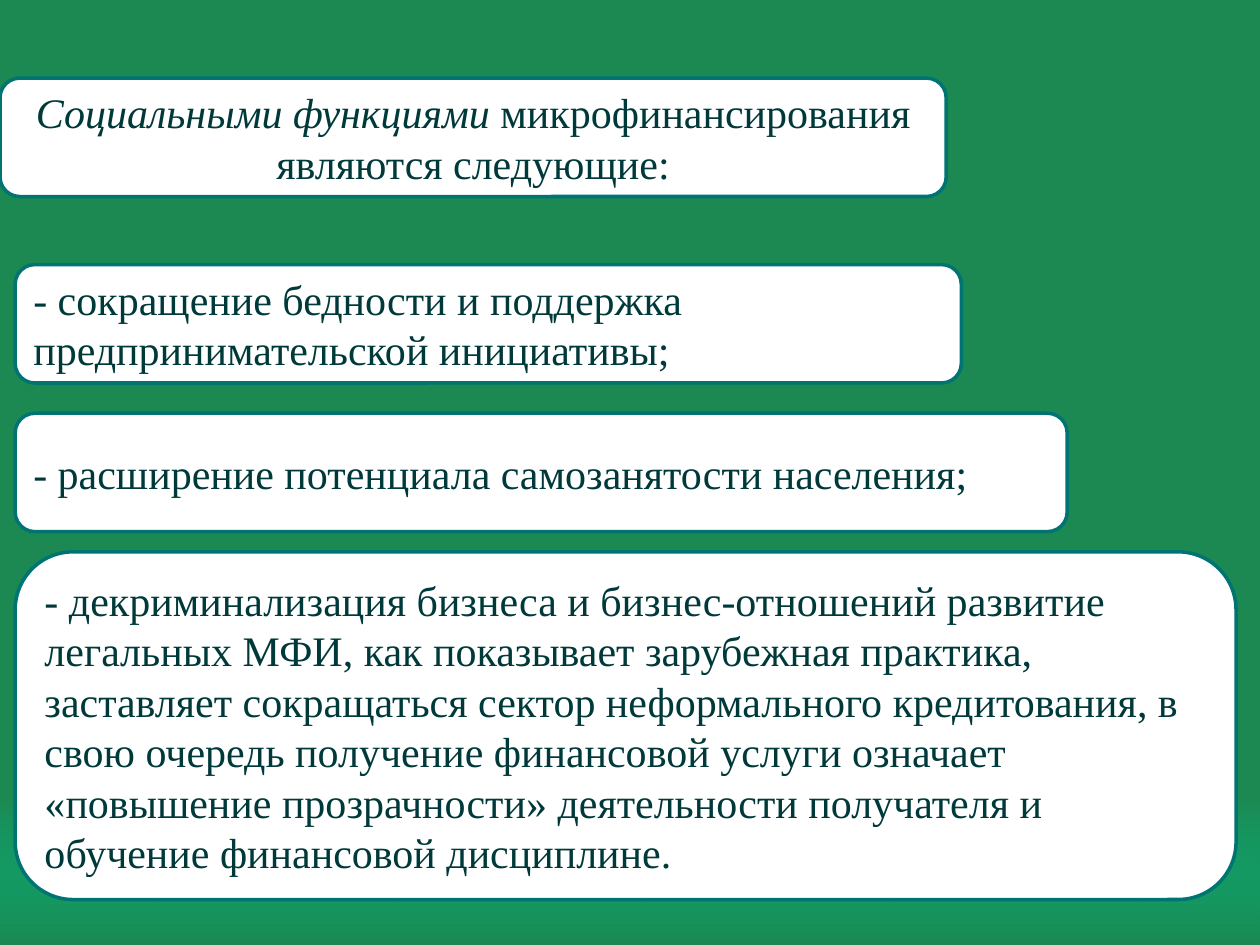
"""Build a slide listing the social functions of microfinance in rounded boxes."""
import pptx
import pptx.dml.color
import pptx.enum.shapes
import pptx.enum.text
import pptx.oxml.ns
import pptx.util
from lxml import etree

Pt = pptx.util.Pt
RGB = pptx.dml.color.RGBColor.from_string
SHAPE = pptx.enum.shapes.MSO_SHAPE
ALIGN = pptx.enum.text.PP_ALIGN
COLORS = {"green": "1C8952", "glow": "00CC99", "box": "FFFFFF", "line": "007373", "text": "00393A"}

prs = pptx.Presentation()
prs.slide_width, prs.slide_height = Pt(720), Pt(540)
s = prs.slides.add_slide(prs.slide_layouts[6])
s.background.fill.solid()
s.background.fill.fore_color.rgb = RGB(COLORS["green"])

sp = s.shapes.add_shape(SHAPE.RECTANGLE, Pt(0), Pt(457.2), Pt(720), Pt(82.8))
sp.shadow.inherit = False
sp.line.fill.background()
sp.fill.gradient()
sp.fill.gradient_angle = 270
for stop, color in zip(sp.fill.gradient_stops, ("glow", "green")):
    stop.color.rgb = RGB(COLORS[color])
glow = sp._element.spPr.find(".//" + pptx.oxml.ns.qn("a:srgbClr"))
etree.SubElement(glow, pptx.oxml.ns.qn("a:alpha"), val="0")

boxes = [
    (0, 44.64, 540.72, 67.68, ALIGN.CENTER,
     ["Социальными функциями", " микрофинансирования являются следующие:"]),
    (8.64, 151.2, 540.72, 67.68, ALIGN.LEFT,
     ["- сокращение бедности и поддержка предпринимательской инициативы;"]),
    (8.64, 236.16, 601.2, 67.68, ALIGN.LEFT,
     ["- расширение потенциала самозанятости населения;"]),
    (8.64, 315.36, 697.68, 198.72, ALIGN.LEFT,
     ["- декриминализация бизнеса и бизнес-отношений развитие легальных МФИ, "
      "как показывает зарубежная практика, заставляет сокращаться сектор "
      "неформального кредитования, в свою очередь получение финансовой услуги "
      "означает «повышение прозрачности» деятельности получателя и обучение "
      "финансовой дисциплине."]),
]
for left, top, width, height, align, texts in boxes:
    sp = s.shapes.add_shape(SHAPE.ROUNDED_RECTANGLE, Pt(left), Pt(top), Pt(width), Pt(height))
    sp.shadow.inherit = False
    sp.fill.solid()
    sp.fill.fore_color.rgb = RGB(COLORS["box"])
    sp.line.color.rgb = RGB(COLORS["line"])
    sp.line.width = Pt(2)
    tf = sp.text_frame
    tf.word_wrap = True
    tf.vertical_anchor = pptx.enum.text.MSO_ANCHOR.MIDDLE
    p = tf.paragraphs[0]
    p.alignment = align
    for text in texts:
        r = p.add_run()
        r.text = text
        r.font.name = "Times New Roman"
        r.font.size = Pt(24)
        r.font.color.rgb = RGB(COLORS["text"])
        r.font.italic = text == "Социальными функциями"

prs.save("out.pptx")
